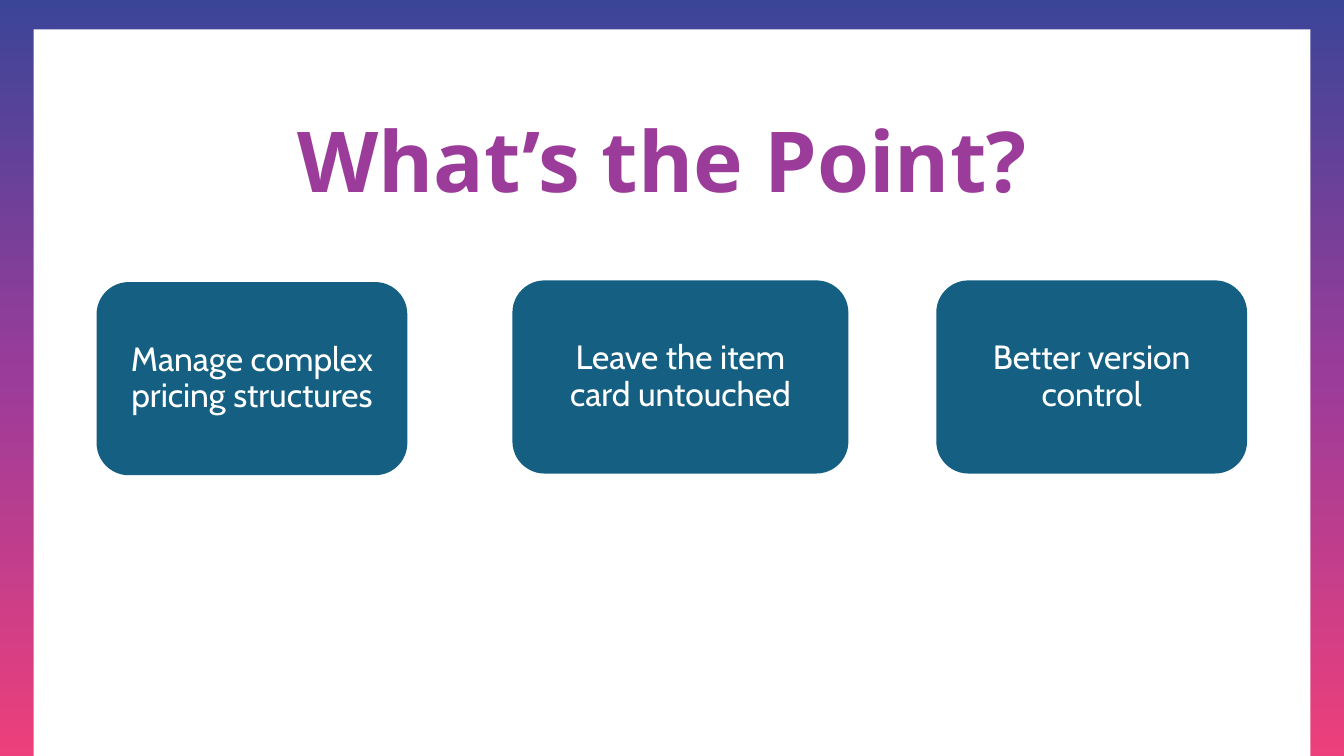
from copy import deepcopy

from pptx import Presentation
from pptx.dml.color import RGBColor
from pptx.enum.shapes import MSO_SHAPE as Shape
from pptx.enum.text import MSO_ANCHOR as Anchor, MSO_AUTO_SIZE as AutoSize, PP_ALIGN as Align
from pptx.util import Pt

WHITE, PURPLE, BLUE, PINK, TEAL = "FFFFFF", "9C3C9A", "3B4598", "ED3F7B", "156082"


def add_block(kind, left, top, width, height):
    """Add a preset shape without outline or shadow."""
    block = slide.shapes.add_shape(kind, Pt(left), Pt(top), Pt(width), Pt(height))
    block.shadow.inherit = False
    block.line.fill.background()
    return block


def write(shape, text, *, font, size, color, bold=False, inset_x=7.2, inset_y=3.6):
    """Fill a shape with one centred paragraph."""
    frame = shape.text_frame
    frame.word_wrap = True
    frame.auto_size = AutoSize.NONE
    frame.vertical_anchor = Anchor.MIDDLE
    frame.margin_left = frame.margin_right = Pt(inset_x)
    frame.margin_top = frame.margin_bottom = Pt(inset_y)
    frame.text = text
    paragraph = frame.paragraphs[0]
    paragraph.alignment = Align.CENTER
    paragraph.line_spacing = 0.9
    style = paragraph.runs[0].font
    style.name, style.size, style.bold = font, Pt(size), bold
    style.color.rgb = RGBColor.from_string(color)


deck = Presentation()
deck.slide_width, deck.slide_height = Pt(960), Pt(540)
slide = deck.slides.add_slide(deck.slide_layouts[5])

# Gradient border around a white page
border = add_block(Shape.RECTANGLE, 0, 0, 960, 540)
border.fill.gradient()
border.fill.gradient_angle = 270
stop_list = border._element.spPr.find(".//{*}gsLst")
stop_list.append(deepcopy(stop_list[-1]))
for stop, position, color in zip(border.fill.gradient_stops, (0, 0.5, 1), (BLUE, PURPLE, PINK)):
    stop.position = position
    stop.color.rgb = RGBColor.from_string(color)

page = add_block(Shape.RECTANGLE, 24, 21, 912, 519)
page.fill.solid()
page.fill.fore_color.rgb = RGBColor.from_string(WHITE)

# Title, raised above the page
title = slide.shapes.title
title.left, title.top, title.width, title.height = Pt(59), Pt(66), Pt(828), Pt(104.4)
write(title, "What’s the Point?", font="Open Sans", size=60, color=PURPLE, bold=True)
slide.shapes._spTree.append(title._element)

# Benefits
benefits = [
    ("Manage complex pricing structures", 69, 201.5, 222),
    ("Leave the item card untouched", 366, 200.3, 240),
    ("Better version control", 668.8, 200.3, 222),
]
for benefit, left, top, width in benefits:
    card = add_block(Shape.ROUNDED_RECTANGLE, left, top, width, 138)
    card.fill.solid()
    card.fill.fore_color.rgb = RGBColor.from_string(TEAL)
    write(card, benefit, font="Cabin", size=24, color=WHITE, inset_x=14.4, inset_y=11.5)

deck.save("out.pptx")
